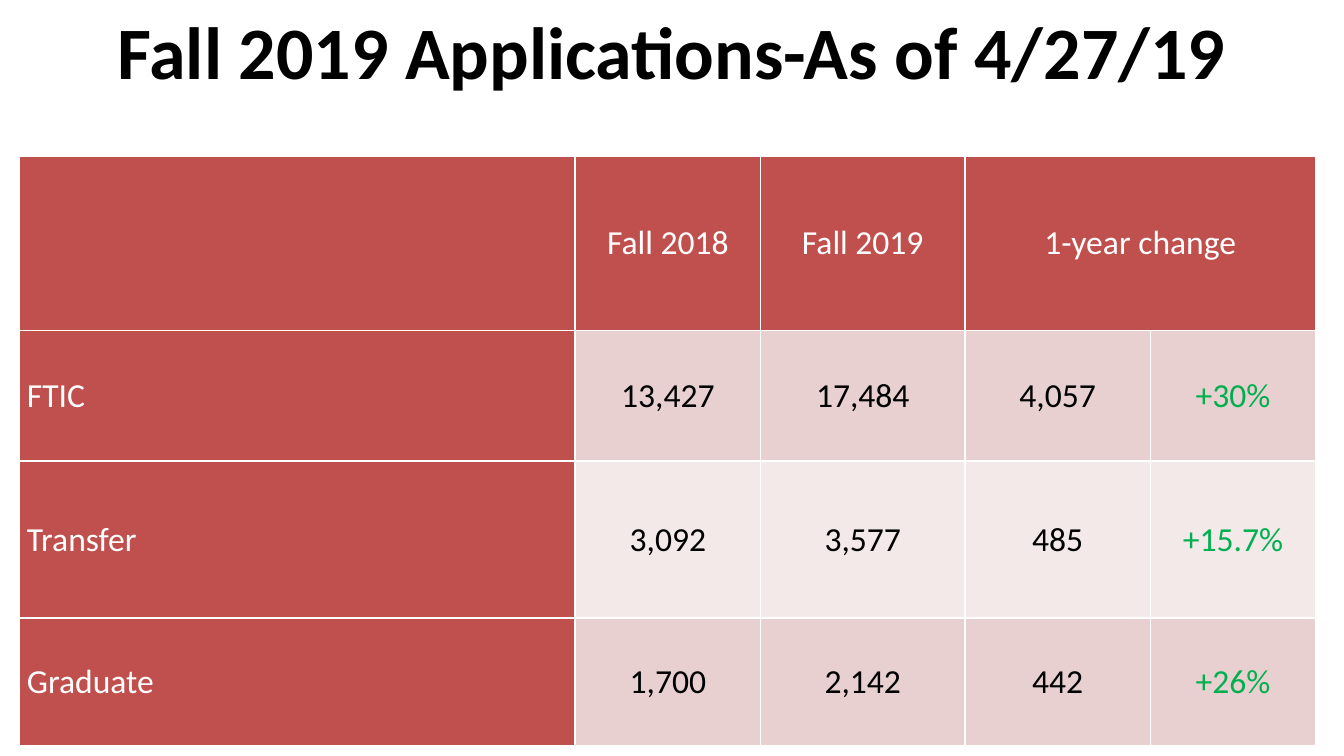
from lxml.etree import SubElement
from pptx import Presentation
from pptx.dml.color import RGBColor
from pptx.enum.text import MSO_ANCHOR, PP_ALIGN
from pptx.oxml.ns import qn
from pptx.util import Inches, Pt

TITLE = "Fall 2019 Applications-As of 4/27/19\v"
ROWS = [
    ["", "Fall 2018", "Fall 2019", "1-year change", ""],
    ["FTIC", "13,427", "17,484", "4,057", "+30%"],
    ["Transfer", "3,092", "3,577", "485", "+15.7%"],
    ["Graduate", "1,700", "2,142", "442", "+26%"],
]
COL_WIDTHS = [4.14, 1.38, 1.52, 1.38, 1.23]
ROW_HEIGHTS = [1.3, 0.97, 1.17, 0.95]
COLORS = {
    "header": "C0504D",
    "odd": "E8D0D0",
    "even": "F4E9E9",
    "white": "FFFFFF",
    "black": "000000",
    "gain": "00B050",
}
FONT = "Calibri"


def rgb(name):
    return RGBColor.from_string(COLORS[name])


def set_text(p, text, size, color, align, bold=False):
    p.text = text
    p.alignment = align
    p.font.name = FONT
    p.font.size = Pt(size)
    p.font.bold = bold
    p.font.color.rgb = rgb(color)


def set_borders(cell):
    tcPr = cell._tc.get_or_add_tcPr()
    for side in "LRTB":
        ln = SubElement(tcPr, qn(f"a:ln{side}"), w=str(Pt(1)))
        fill = SubElement(ln, qn("a:solidFill"))
        SubElement(fill, qn("a:srgbClr"), val=COLORS["white"])


def cell_colors(row, col):
    if row == 0 or col == 0:
        return "header", "white"
    band = "odd" if row % 2 else "even"
    return band, "gain" if col == len(COL_WIDTHS) - 1 else "black"


def add_title(s):
    sp = s.shapes.add_textbox(Inches(0.5), Inches(0.23), Inches(9), Inches(0.94))
    tf = sp.text_frame
    tf.word_wrap = True
    tf.vertical_anchor = MSO_ANCHOR.MIDDLE
    set_text(tf.paragraphs[0], TITLE, 39.6, "black", PP_ALIGN.CENTER, True)


def add_applications_table(s):
    table = s.shapes.add_table(
        len(ROWS), len(COL_WIDTHS), Inches(0.14), Inches(1.16),
        Inches(sum(COL_WIDTHS)), Inches(sum(ROW_HEIGHTS)),
    ).table
    for column, width in zip(table.columns, COL_WIDTHS):
        column.width = Inches(width)
    for row, height in zip(table.rows, ROW_HEIGHTS):
        row.height = Inches(height)
    for i, values in enumerate(ROWS):
        for j, value in enumerate(values):
            cell = table.cell(i, j)
            fill, color = cell_colors(i, j)
            set_borders(cell)
            cell.fill.solid()
            cell.fill.fore_color.rgb = rgb(fill)
            cell.vertical_anchor = MSO_ANCHOR.MIDDLE
            cell.margin_left = cell.margin_right = Inches(0.06)
            cell.margin_top = cell.margin_bottom = 0
            align = PP_ALIGN.CENTER if j else PP_ALIGN.LEFT
            set_text(cell.text_frame.paragraphs[0], value, 18, color, align)
    table.cell(0, 3).merge(table.cell(0, 4))


def main():
    prs = Presentation()
    prs.slide_width = Inches(10)
    prs.slide_height = prs.slide_width * 9 // 16
    s = prs.slides.add_slide(prs.slide_layouts[6])
    add_title(s)
    add_applications_table(s)
    prs.save("out.pptx")


if __name__ == "__main__":
    main()
